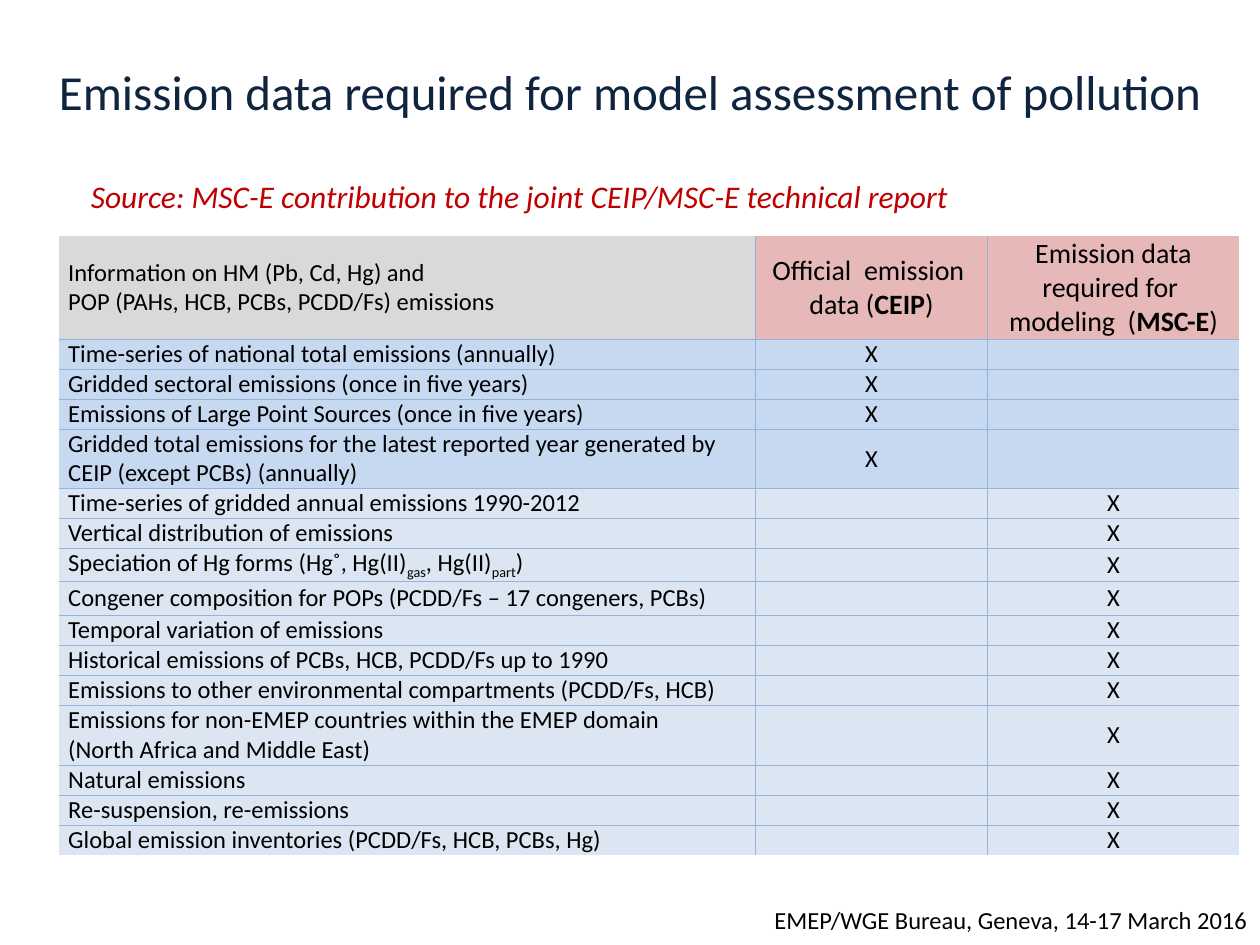
from lxml import etree
from pptx import Presentation
from pptx import util as u
from pptx.dml.color import RGBColor
from pptx.enum import text
from pptx.oxml.ns import qn

BLACK = RGBColor(0x00, 0x00, 0x00)
NAVY = RGBColor(0x0F, 0x24, 0x3E)
RED = RGBColor(0xC0, 0x00, 0x00)
GREY = RGBColor(0xD9, 0xD9, 0xD9)
PINK = RGBColor(0xE6, 0xB9, 0xB8)
OFFICIAL_BLUE = RGBColor(0xC6, 0xD9, 0xF1)
MODEL_BLUE = RGBColor(0xDC, 0xE6, 0xF2)
RULE_BLUE = RGBColor(0x95, 0xB3, 0xD7)

LEFT = text.PP_ALIGN.LEFT
CENTER = text.PP_ALIGN.CENTER
RIGHT = text.PP_ALIGN.RIGHT
TOP = text.MSO_ANCHOR.TOP
MIDDLE = text.MSO_ANCHOR.MIDDLE

COLUMN_WIDTHS = (398, 132.5, 144)
HEADER_HEIGHT, LINE_HEIGHT = 51, 17.1
CONGENER_HEIGHT = 19.3

# Each text is a list of (wording, style) pairs.
HEADERS = [
    [("Information on HM (Pb, Cd, Hg) and \nPOP (PAHs, HCB, PCBs, PCDD/Fs) emissions", "")],
    [("Official  emission \ndata (", ""), ("CEIP", "bold"), (")", "")],
    [("Emission data required for  modeling  (", ""), ("MSC-E", "bold"), (")", "")],
]
OFFICIAL_DATA = [
    ("Time-series of national total emissions (annually)", LINE_HEIGHT),
    ("Gridded sectoral emissions (once in five years)", LINE_HEIGHT),
    ("Emissions of Large Point Sources (once in five years)", LINE_HEIGHT),
    ("Gridded total emissions for the latest reported year generated by "
     "CEIP (except PCBs) (annually)", 2 * LINE_HEIGHT),
]
MODEL_DATA = [
    ("Time-series of gridded annual emissions 1990-2012", LINE_HEIGHT),
    ("Vertical distribution of emissions", LINE_HEIGHT),
    ([("Speciation of Hg forms (Hg˚, Hg(II)", ""), ("gas", "subscript"),
      (", Hg(II)", ""), ("part", "subscript"), (")", "")], LINE_HEIGHT),
    ("Congener composition for POPs (PCDD/Fs – 17 congeners, PCBs)", CONGENER_HEIGHT),
    ("Temporal variation of emissions", LINE_HEIGHT),
    ("Historical emissions of PCBs, HCB, PCDD/Fs up to 1990", LINE_HEIGHT),
    ("Emissions to other environmental compartments (PCDD/Fs, HCB)", LINE_HEIGHT),
    ("Emissions for non-EMEP countries within the EMEP domain\n"
     "(North Africa and Middle East)", 2 * LINE_HEIGHT),
    ("Natural emissions", LINE_HEIGHT),
    ("Re-suspension, re-emissions", LINE_HEIGHT),
    ("Global emission inventories (PCDD/Fs, HCB, PCBs, Hg)", LINE_HEIGHT),
]


def write(frame, content, size=14, color=BLACK, align=LEFT, italic=False,
          spacing=None, font="Calibri"):
    """Fill the first paragraph with a string or a list of styled runs."""
    paragraph = frame.paragraphs[0]
    paragraph.alignment = align
    if spacing:
        paragraph.line_spacing = spacing
    runs = [(content, "")] if isinstance(content, str) else content
    for wording, style in runs:
        for index, line in enumerate(wording.split("\n")):
            if index:
                paragraph.add_line_break()
            if not line:
                continue
            run = paragraph.add_run()
            run.text = line
            run.font.name = font
            run.font.size = u.Pt(size)
            run.font.color.rgb = color
            run.font.bold = style == "bold"
            run.font.italic = italic
            if style == "subscript":
                run.font._element.set("baseline", "-25000")
    if not paragraph.runs:
        # An empty cell keeps the row low only with its own text size.
        end = etree.SubElement(paragraph._p, qn("a:endParaRPr"))
        end.set("sz", str(size * 100))


def set_borders(cell, ruled_sides):
    """Rule the given sides of a cell and clear the others."""
    properties = cell._tc.get_or_add_tcPr()
    for index, side in enumerate(("L", "R", "T", "B")):
        line = etree.Element(qn("a:ln" + side), w=str(u.Pt(0.25)))
        if side in ruled_sides:
            fill = etree.SubElement(line, qn("a:solidFill"))
            etree.SubElement(fill, qn("a:srgbClr"), val=str(RULE_BLUE))
        else:
            etree.SubElement(line, qn("a:noFill"))
        properties.insert(index, line)


class SlideBuilder:
    def __init__(self, presentation):
        self.slide = presentation.slides.add_slide(presentation.slide_layouts[5])

    def place(self, shape, box, content, anchor=TOP, **style):
        shape.left, shape.top, shape.width, shape.height = map(u.Pt, box)
        shape.text_frame.word_wrap = True
        shape.text_frame.auto_size = text.MSO_AUTO_SIZE.NONE
        shape.text_frame.vertical_anchor = anchor
        write(shape.text_frame, content, **style)

    def title(self, box, content, **style):
        self.place(self.slide.shapes.title, box, content, **style)

    def label(self, box, content, **style):
        shape = self.slide.shapes.add_textbox(*map(u.Pt, box))
        self.place(shape, box, content, **style)

    def table(self, left, top, widths, rows):
        """Add a table from rows of (height, [(content, fill, format), ...])."""
        height = sum(row[0] for row in rows)
        table = self.slide.shapes.add_table(
            len(rows), len(widths), u.Pt(left), u.Pt(top),
            u.Pt(sum(widths)), u.Pt(height)).table
        table.first_row = table.horz_banding = False
        for column, width in zip(table.columns, widths):
            column.width = u.Pt(width)
        for i, (row_height, cells) in enumerate(rows):
            table.rows[i].height = u.Pt(row_height)
            for j, (content, fill, style) in enumerate(cells):
                cell = table.cell(i, j)
                cell.margin_left = cell.margin_right = u.Pt(5.2)
                cell.margin_top = cell.margin_bottom = 0
                cell.vertical_anchor = MIDDLE
                cell.fill.solid()
                cell.fill.fore_color.rgb = fill
                write(cell.text_frame, content, **style)
                inner = {"L": j > 0, "R": j < len(widths) - 1,
                         "T": i > 0, "B": i < len(rows) - 1}
                set_borders(cell, [side for side, ruled in inner.items() if ruled])


def table_rows():
    heading = {"size": 16, "align": CENTER}
    rows = [(HEADER_HEIGHT, list(zip(HEADERS, (GREY, PINK, PINK),
                                     ({}, heading, heading))))]
    groups = ((OFFICIAL_DATA, OFFICIAL_BLUE, ("X", "")),
              (MODEL_DATA, MODEL_BLUE, ("", "X")))
    for items, fill, marks in groups:
        for content, height in items:
            marked = [(mark, fill, {"align": CENTER}) for mark in marks]
            rows.append((height, [(content, fill, {})] + marked))
    return rows


def main():
    presentation = Presentation()
    presentation.slide_width, presentation.slide_height = u.Pt(720), u.Pt(540)
    builder = SlideBuilder(presentation)
    builder.title((0, 31.5, 720, 58.5),
                  "Emission data required for model assessment of pollution",
                  size=28, color=NAVY, align=CENTER)
    builder.label((44.8, 88.5, 613.5, 36.5),
                  "Source: MSC-E contribution to the joint CEIP/MSC-E technical report",
                  size=18, color=RED, italic=True, spacing=1.5, anchor=MIDDLE)
    builder.table(33.8, 135, COLUMN_WIDTHS, table_rows())
    builder.label((348.5, 513.5, 371.5, 24.2),
                  "EMEP/WGE Bureau, Geneva, 14-17 March 2016", align=RIGHT)
    presentation.save("out.pptx")


if __name__ == "__main__":
    main()
